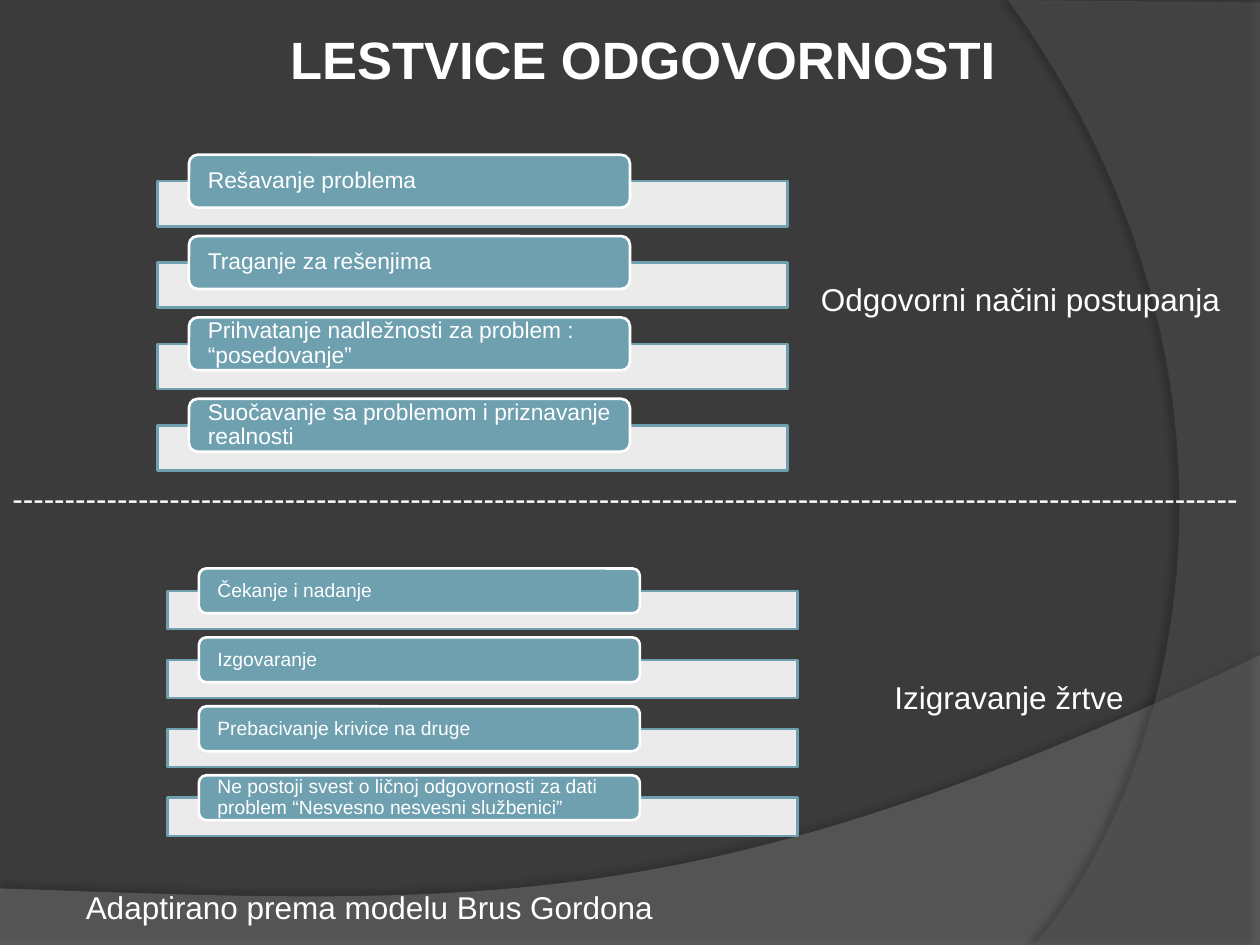
from dataclasses import dataclass
from typing import Any

from lxml import etree
from pptx import Presentation
from pptx.dml.color import RGBColor
from pptx.enum.shapes import MSO_SHAPE
from pptx.enum.text import MSO_ANCHOR, MSO_AUTO_SIZE, PP_ALIGN
from pptx.oxml.ns import qn
from pptx.util import Cm, Pt

RECTANGLE = MSO_SHAPE.RECTANGLE
ROUNDED = MSO_SHAPE.ROUNDED_RECTANGLE
MIDDLE = MSO_ANCHOR.MIDDLE
TOP = MSO_ANCHOR.TOP
FIT_SHAPE = MSO_AUTO_SIZE.SHAPE_TO_FIT_TEXT
LEFT = PP_ALIGN.LEFT
CENTER = PP_ALIGN.CENTER
CURVE_STEPS = 48


def color(hex_code):
    return RGBColor.from_string(hex_code)


def apply(target, values):
    for name, value in values.items():
        setattr(target, name, value)


def curve(p0, p1, p2, p3):
    points = []
    for step in range(CURVE_STEPS + 1):
        t = step / CURVE_STEPS
        u = 1 - t
        points.append(tuple(
            u**3 * a + 3 * u**2 * t * b + 3 * u * t**2 * c + t**3 * d
            for a, b, c, d in zip(p0, p1, p2, p3)
        ))
    return points


@dataclass
class SlideBuilder:
    slide: Any
    font: str = "Arial"
    white: str = "FFFFFF"
    accent: str = "6EA0B0"
    backdrop: str = "3B3B3B"

    def background(self):
        fill = self.slide.background.fill
        fill.solid()
        fill.fore_color.rgb = color(self.backdrop)

    def paint(self, shape, fill, opacity=100, line=None):
        shape.shadow.inherit = False
        shape.fill.solid()
        shape.fill.fore_color.rgb = color(fill)
        if opacity < 100:
            tint = shape._element.spPr.find(qn("a:solidFill"))[0]
            etree.SubElement(tint, qn("a:alpha"), val=str(opacity * 1000))
        if line:
            shape.line.color.rgb = color(line)
            shape.line.width = Pt(1.5)
        else:
            shape.line.fill.background()

    def swoosh(self, points, fill, opacity, shade, distance, angle):
        outline = [(Cm(x), Cm(y)) for x, y in points]
        builder = self.slide.shapes.build_freeform(*outline[0])
        builder.add_line_segments(outline[1:], close=True)
        shape = builder.convert_to_shape()
        self.paint(shape, fill, opacity)
        effects = shape._element.spPr.find(qn("a:effectLst"))
        shadow = etree.SubElement(
            effects, qn("a:outerShdw"), blurRad=str(Pt(4)),
            dist=str(Pt(distance)), dir=str(angle * 60000),
            algn="ctr", rotWithShape="0")
        tint = etree.SubElement(shadow, qn("a:srgbClr"), val="000000")
        etree.SubElement(tint, qn("a:alpha"), val=str(shade * 1000))

    def set_text(self, shape, text, size, frame, paragraph=None, bold=False):
        apply(shape.text_frame, frame)
        line = shape.text_frame.paragraphs[0]
        apply(line, {"alignment": LEFT, **(paragraph or {})})
        run = line.add_run()
        run.text = text
        apply(run.font, {"name": self.font, "size": Pt(size), "bold": bold})
        run.font.color.rgb = color(self.white)

    def title(self, text, left, top, width, height):
        box = self.slide.shapes.add_textbox(
            Cm(left), Cm(top), Cm(width), Cm(height))
        self.set_text(box, text, 30,
                      {"word_wrap": True, "vertical_anchor": TOP},
                      {"alignment": CENTER, "space_before": Pt(2)}, bold=True)
        properties = box.text_frame.paragraphs[0]._p.get_or_add_pPr()
        properties.set("marL", str(Cm(1.17)))
        properties.set("indent", str(Cm(-1.07)))

    def caption(self, text, left, top, width):
        box = self.slide.shapes.add_textbox(
            Cm(left), Cm(top), Cm(width), Cm(1.02))
        self.set_text(box, text, 18,
                      {"word_wrap": False, "auto_size": FIT_SHAPE})

    def ladder(self, steps, left, top, pitch, size):
        label_height, bar_height = pitch * 0.65, pitch * 0.555
        frame = {"word_wrap": True, "vertical_anchor": MIDDLE,
                 "margin_left": Cm(0.33), "margin_right": Cm(0.33),
                 "margin_top": 0, "margin_bottom": 0}
        group = self.slide.shapes.add_group_shape()
        for index, step in enumerate(steps):
            y = top + index * pitch
            bar = group.shapes.add_shape(
                RECTANGLE, Cm(left), Cm(y + label_height / 2),
                Cm(12.7), Cm(bar_height))
            self.paint(bar, self.white, 90, self.accent)
            label = group.shapes.add_shape(
                ROUNDED, Cm(left + 0.63), Cm(y), Cm(8.89), Cm(label_height))
            self.paint(label, self.accent, line=self.white)
            self.set_text(label, step, size, frame, {"line_spacing": 0.9})


def main():
    deck = Presentation()
    apply(deck, {"slide_width": Cm(25.4), "slide_height": Cm(19.05)})
    page = SlideBuilder(deck.slides.add_slide(deck.slide_layouts[6]))
    page.background()

    bottom_wave = [(0, 19.07), (25.4, 19.07)] + curve(
        (25.4, 13.21), (14.2, 18.52), (9.93, 18.26), (0, 17.91))
    right_arc = [(25.4, 0.05), (25.4, 19.05)] + curve(
        (20.85, 19.05), (23.75, 15.72), (25.86, 7.62), (20.32, 0))
    page.swoosh(bottom_wave, "7F7F7F", 45, 35, 3.5, 270)
    page.swoosh(right_arc, "5E5E5E", 40, 45, 4, 180)

    page.title("LESTVICE ODGOVORNOSTI", 1.27, 0.43, 23.29, 16.59)
    page.ladder([
        "Rešavanje problema",
        "Traganje za rešenjima",
        "Prihvatanje nadležnosti za problem : “posedovanje”",
        "Suočavanje sa problemom i priznavanje realnosti",
    ], left=3.18, top=3.12, pitch=1.64, size=13)
    page.caption("-" * 117, 0, 9.53, 25.3)
    page.ladder([
        "Čekanje i nadanje",
        "Izgovaranje",
        "Prebacivanje krivice na druge",
        "Ne postoji svest o ličnoj odgovornosti za dati problem "
        "“Nesvesno nesvesni službenici”",
    ], left=3.38, top=11.46, pitch=1.39, size=11)
    page.caption("Odgovorni načini postupanja", 16.3, 5.52, 8.64)
    page.caption("Izigravanje žrtve", 17.78, 13.55, 5.18)
    page.caption("Adaptirano prema modelu Brus Gordona", 1.48, 17.78, 12.07)

    deck.save("out.pptx")


if __name__ == "__main__":
    main()
